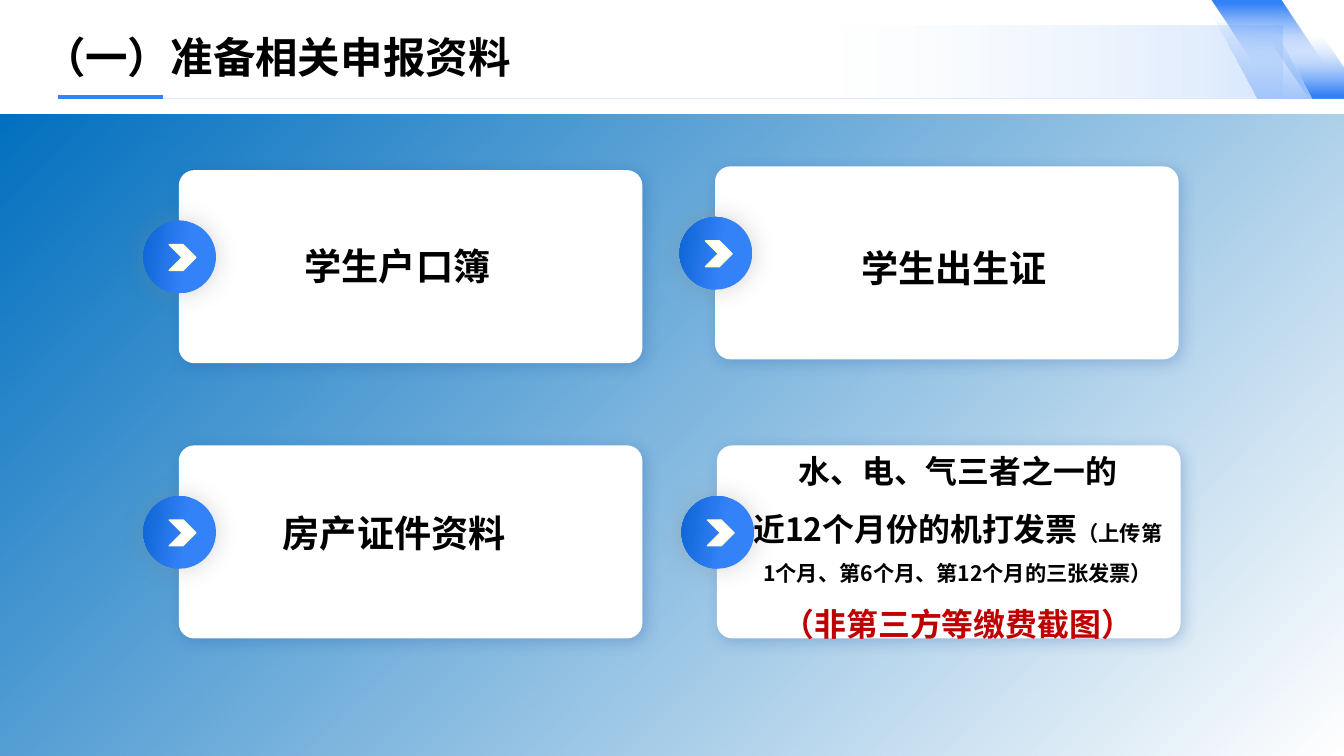
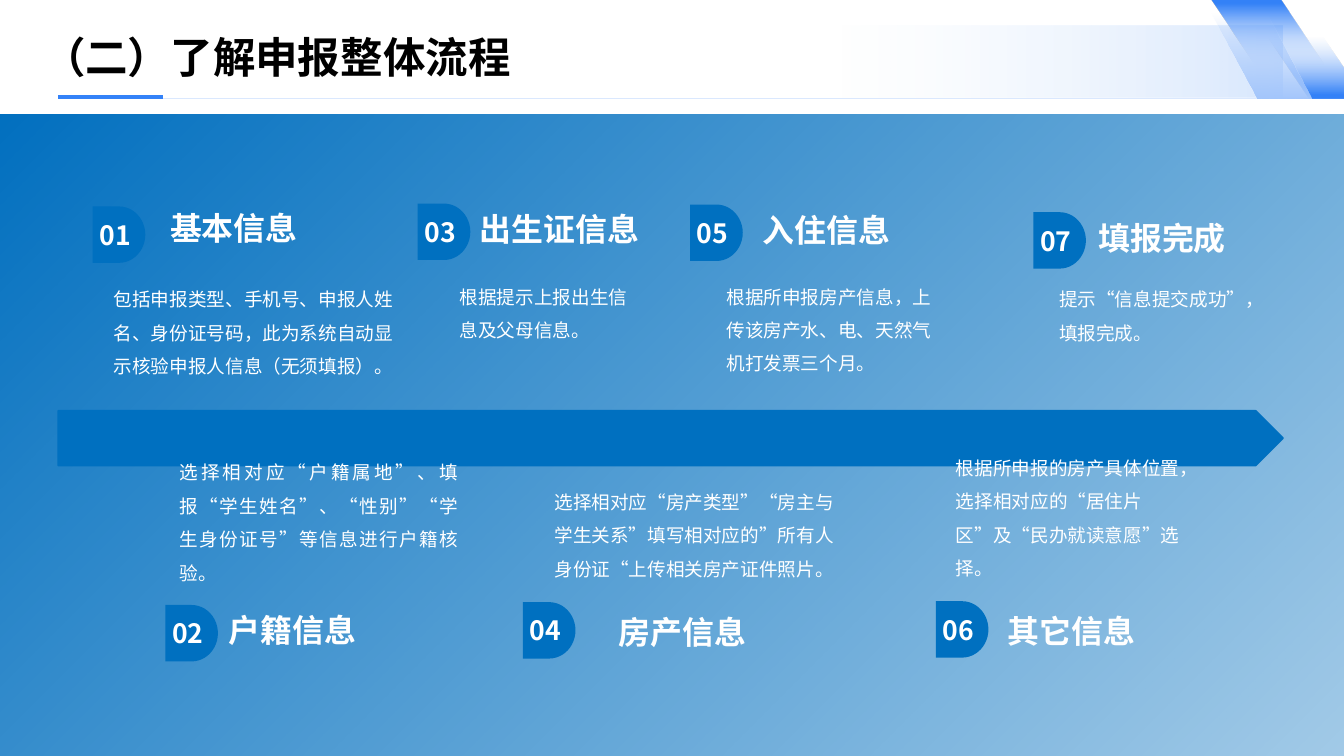
from dataclasses import dataclass

from lxml import etree
from pptx import Presentation
from pptx.dml.color import RGBColor
from pptx.enum.shapes import MSO_CONNECTOR, MSO_SHAPE
from pptx.enum.text import MSO_ANCHOR, MSO_AUTO_SIZE, PP_ALIGN
from pptx.oxml.ns import qn
from pptx.util import Inches, Pt

RECT, ROUNDED = MSO_SHAPE.RECTANGLE, MSO_SHAPE.ROUNDED_RECTANGLE
OVAL, CHEVRON = MSO_SHAPE.OVAL, MSO_SHAPE.CHEVRON
ARROW_BAR, DELAY = MSO_SHAPE.PENTAGON, MSO_SHAPE.FLOWCHART_DELAY
TOP, MIDDLE, BOTTOM = MSO_ANCHOR.TOP, MSO_ANCHOR.MIDDLE, MSO_ANCHOR.BOTTOM
LEFT, CENTER, JUSTIFY = PP_ALIGN.LEFT, PP_ALIGN.CENTER, PP_ALIGN.JUSTIFY


@dataclass(frozen=True)
class Theme:
    blue: str = "0070C0"
    accent: str = "3482F8"
    accent_dark: str = "0D65D4"
    pale: str = "A3C6FC"
    rule: str = "DAE8FE"
    white: str = "FFFFFF"
    black: str = "000000"
    red: str = "C00000"
    chevron_edge: str = "FFFED2"
    card_shadow: str = "1146A2"
    badge_shadow: str = "808080"
    title_font: str = "Arial"
    font: str = "Noto Sans CJK SC"
    title_size: int = 32
    card_size: int = 28
    heading_size: int = 24
    number_size: int = 20
    note_size: int = 16
    body_size: int = 14


T = Theme()
WIDTH, HEIGHT = 14.06, 7.91
PANEL_TOP = 1.2

TITLES = ("（一）准备相关申报资料", "（二）了解申报整体流程")

# Card corner, then label text and its box
CARDS = [
    ((1.87, 1.78), "学生户口簿", (3.09, 2.5, 2.33, 0.57)),
    ((7.48, 1.74), "学生出生证", (8.91, 2.52, 2.39, 0.57)),
    ((1.87, 4.66), "房产证件资料", (2.86, 5.29, 2.99, 0.57)),
    ((7.5, 4.66), None, None),
]
INVOICE_BOX = (7.77, 4.48, 4.5, 2.5)
INVOICE_LINES = [
    ("水、电、气三者之一的", "", T.black),
    ("近12个月份的机打发票", "（上传第1个月、第6个月、第12个月的三张发票）", T.black),
    ("（非第三方等缴费截图）", "", T.red),
]

# Heading, badge corner, heading (left, top, width), description, its box
STEPS = [
    ("基本信息", (0.97, 2.16), (1.78, 2.16, 1.67),
     "包括申报类型、手机号、申报人姓名、身份证号码，此为系统自动显示核验申报人信息（无须填报）。",
     (1.19, 2.9, 2.96, 1.21)),
    ("户籍信息", (1.73, 6.33), (2.39, 6.36, 1.47),
     "选择相对应“户籍属地”、填报“学生姓名”、“性别”“学生身份证号”等信息进行户籍核验。",
     (1.88, 5.03, 2.91, 1.08)),
    ("出生证信息", (4.37, 2.13), (5.02, 2.17, 2.02),
     "根据提示上报出生信息及父母信息。",
     (4.81, 2.87, 1.86, 1.49)),
    ("房产信息", (5.47, 6.3), (6.47, 6.38, 1.94),
     "选择相对应“房产类型”“房主与学生关系”填写相对应的”所有人身份证“上传相关房产证件照片。",
     (5.8, 5.63, 3.01, 0.44)),
    ("入住信息", (7.22, 2.14), (7.98, 2.18, 1.38),
     "根据所申报房产信息，上传该房产水、电、天然气机打发票三个月。",
     (7.6, 2.87, 2.31, 1.09)),
    ("其它信息", (9.79, 6.29), (10.54, 6.37, 1.86),
     "根据所申报的房产具体位置，选择相对应的“居住片区”及“民办就读意愿”选择。",
     (10, 4.94, 2.45, 1.12)),
    ("填报完成", (10.81, 2.22), (11.49, 2.26, 1.4),
     "提示“信息提交成功”，填报完成。",
     (11.08, 2.9, 2.01, 1.21)),
]
JUSTIFIED_STEP = 2

# Outline, gradient stops (position, colour, opacity) and clockwise angle
RIBBON_STOPS = [(35, T.pale, 0), (96, T.accent, 100)]
RIBBONS = [
    ([(13.69, 1.03), (13.03, 0.04), (13.6, 0.04), (14.06, 0.72), (14.06, 1.03)],
     RIBBON_STOPS, 90),
    ([(13.37, 1.04), (12.67, 0), (13.4, 0), (14.1, 1.04)], RIBBON_STOPS, 270),
    ([(13.25, 0.14), (13.72, 1.03), (13.15, 1.03), (12.67, 0.14)],
     [(0, T.pale, 0), (100, T.pale, 100)], 90),
]


def rgb(color):
    return RGBColor.from_string(color)


def inches(values):
    return [Inches(v) for v in values]


def add_color(parent, color, opacity):
    node = etree.SubElement(parent, qn("a:srgbClr"), val=color)
    etree.SubElement(node, qn("a:alpha"), val=str(opacity * 1000))


def set_gradient(shape, stops, angle):
    """Fill with (position, colour, opacity) stops at a clockwise angle."""
    shape.fill.gradient()
    shape.fill.gradient_angle = (360 - angle) % 360
    stop_list = shape.element.spPr.find(qn("a:gradFill")).find(qn("a:gsLst"))
    for old in list(stop_list):
        stop_list.remove(old)
    for position, color, opacity in stops:
        stop = etree.SubElement(stop_list, qn("a:gs"), pos=str(position * 1000))
        add_color(stop, color, opacity)


def set_shadow(shape, color, opacity, blur, distance, angle):
    shape.shadow.inherit = False
    effects = shape.element.spPr.find(qn("a:effectLst"))
    outer = etree.SubElement(
        effects, qn("a:outerShdw"), blurRad=str(Pt(blur)), dist=str(Pt(distance)),
        dir=str(angle * 60000), algn="ctr", rotWithShape="0")
    add_color(outer, color, opacity)


def add_plain(slide, preset, box, color=None):
    shape = slide.shapes.add_shape(preset, *inches(box))
    shape.shadow.inherit = False
    shape.line.fill.background()
    if color:
        shape.fill.solid()
        shape.fill.fore_color.rgb = rgb(color)
    return shape


def add_rule(slide, left, right, y, color, width):
    rule = slide.shapes.add_connector(
        MSO_CONNECTOR.STRAIGHT, *inches((left, y, right, y)))
    rule.line.color.rgb = rgb(color)
    rule.line.width = Pt(width)
    etree.SubElement(rule.element.spPr, qn("a:effectLst"))


def style(paragraph, size, color, bold=False, align=LEFT, spacing=None, font=T.font):
    paragraph.alignment = align
    if spacing:
        paragraph.line_spacing = spacing
    face = paragraph.font
    face.size, face.bold, face.name = Pt(size), bold, font
    face.color.rgb = rgb(color)
    latin = paragraph._p.pPr.find(qn("a:defRPr")).find(qn("a:latin"))
    east_asian = etree.Element(qn("a:ea"), typeface=T.font)
    latin.addnext(east_asian)


def set_frame(frame, anchor=TOP, wrap=True, inset=None):
    frame.auto_size = MSO_AUTO_SIZE.NONE
    frame.word_wrap = wrap
    frame.vertical_anchor = anchor
    if inset is not None:
        frame.margin_left = frame.margin_right = Inches(inset)
        frame.margin_top = frame.margin_bottom = Inches(inset)


def add_text(slide, box, text, size, color, anchor=TOP, inset=None, **look):
    frame = slide.shapes.add_textbox(*inches(box)).text_frame
    set_frame(frame, anchor, inset=inset)
    frame.text = text
    style(frame.paragraphs[0], size, color, **look)


def add_base(prs, title_text, panel_fade):
    """Add a slide with the title, header band, ribbons and blue panel."""
    slide = prs.slides.add_slide(prs.slide_layouts[5])
    title = slide.shapes.title
    title.left, title.top, title.width, title.height = inches((0.35, 0.27, 13.04, 0.64))
    set_frame(title.text_frame)
    title.text_frame.text = title_text
    style(title.text_frame.paragraphs[0], T.title_size, T.black, bold=True,
          font=T.title_font)

    panel = add_plain(slide, RECT, (0, PANEL_TOP, WIDTH, HEIGHT - PANEL_TOP))
    set_gradient(panel, [(0, T.blue, panel_fade), (100, T.blue, 100)], 225)
    band = add_plain(slide, RECT, (4.79, 0.27, 8.63, 0.75))
    set_gradient(band, [(46, T.pale, 0), (100, T.accent, 19)], 0)
    add_rule(slide, 1.69, 13.38, 1.03, T.rule, 1)
    add_rule(slide, 0.61, 1.71, 1.02, T.accent, 3)

    for outline, stops, angle in RIBBONS:
        start, *rest = [inches(point) for point in outline]
        builder = slide.shapes.build_freeform(*start)
        builder.add_line_segments(rest, close=True)
        ribbon = builder.convert_to_shape()
        ribbon.shadow.inherit = False
        ribbon.line.fill.background()
        set_gradient(ribbon, stops, angle)
    return slide


def add_card(slide, left, top):
    card = add_plain(slide, ROUNDED, (left, top, 4.85, 2.02), T.white)
    card.adjustments[0] = 0.08
    set_shadow(card, T.card_shadow, 24, 12, 3, 45)
    badge = add_plain(slide, OVAL, (left - 0.37, top + 0.53, 0.76, 0.76))
    set_gradient(badge, [(41, T.accent, 100), (100, T.accent_dark, 100)], 188)
    set_shadow(badge, T.badge_shadow, 32, 18, 0, 358)
    chevron = add_plain(slide, CHEVRON, (left - 0.1, top + 0.78, 0.28, 0.27), T.white)
    chevron.line.color.rgb = rgb(T.chevron_edge)
    chevron.line.width = Pt(1)


def build_materials(prs):
    slide = add_base(prs, TITLES[0], panel_fade=0)
    for corner, label, label_box in CARDS:
        add_card(slide, *corner)
        if label:
            add_text(slide, label_box, label, T.card_size, T.black, bold=True)

    frame = slide.shapes.add_textbox(*inches(INVOICE_BOX)).text_frame
    set_frame(frame)
    for index, (text, note, color) in enumerate(INVOICE_LINES):
        paragraph = frame.add_paragraph() if index else frame.paragraphs[0]
        paragraph.add_run().text = text
        style(paragraph, T.heading_size, color, bold=True, align=CENTER, spacing=1.5)
        if note:
            run = paragraph.add_run()
            run.text = note
            run.font.size = Pt(T.note_size)


def build_process(prs):
    slide = add_base(prs, TITLES[1], panel_fade=37)
    timeline = add_plain(slide, ARROW_BAR, (0.61, 4.3, 12.81, 0.57), T.blue)
    timeline.line.color.rgb = rgb(T.blue)
    timeline.line.width = Pt(1.5)

    for number, (heading, corner, place, detail, detail_box) in enumerate(STEPS, 1):
        badge = add_plain(slide, DELAY, (*corner, 0.55, 0.59), T.blue)
        set_frame(badge.text_frame, MIDDLE, wrap=False, inset=0)
        badge.text_frame.text = f"{number:02}"
        style(badge.text_frame.paragraphs[0], T.number_size, T.white, bold=True,
              align=CENTER)
        add_text(slide, (*place, 0.45), heading, T.heading_size, T.white,
                 anchor=MIDDLE, inset=0, bold=True)
        below = number % 2 == 0
        add_text(slide, detail_box, detail, T.body_size, T.white,
                 anchor=BOTTOM if below else TOP, inset=0, spacing=1.5,
                 align=JUSTIFY if number == JUSTIFIED_STEP else LEFT)


def main():
    prs = Presentation()
    prs.slide_width, prs.slide_height = Inches(WIDTH), Inches(HEIGHT)
    build_materials(prs)
    build_process(prs)
    prs.save("out.pptx")


if __name__ == "__main__":
    main()
